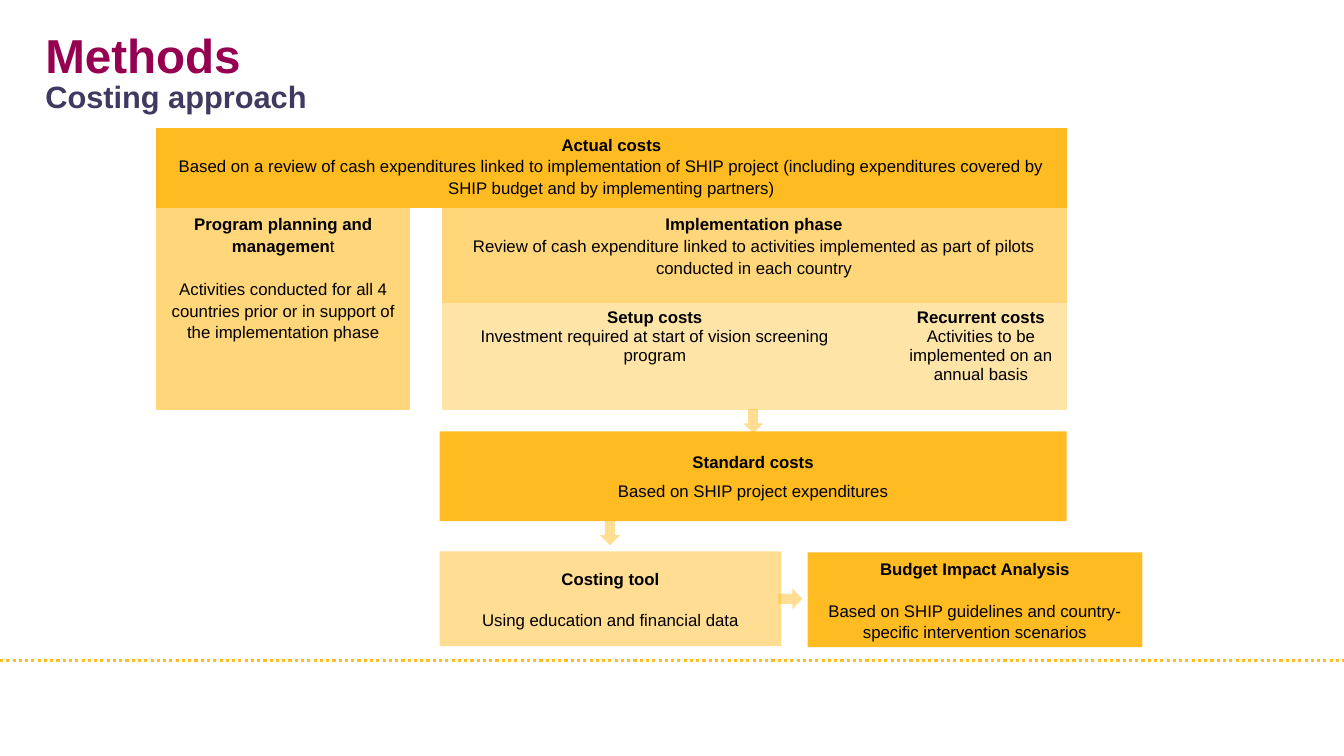
from lxml import etree
from pptx import Presentation
from pptx.dml.color import RGBColor
from pptx.enum.dml import MSO_LINE
from pptx.enum.shapes import MSO_CONNECTOR, MSO_SHAPE
from pptx.enum.text import MSO_ANCHOR, PP_ALIGN
from pptx.oxml.ns import qn
from pptx.util import Pt

PX = 9144  # 100 px to the inch
CENTER, LEFT = PP_ALIGN.CENTER, PP_ALIGN.LEFT
MIDDLE, TOP = MSO_ANCHOR.MIDDLE, MSO_ANCHOR.TOP
RECTANGLE, ARROW = MSO_SHAPE.RECTANGLE, MSO_SHAPE.RIGHT_ARROW
STRAIGHT, DOTTED = MSO_CONNECTOR.STRAIGHT, MSO_LINE.ROUND_DOT
NO_STYLE = "{2D5ABB26-0587-4C30-8999-92F81FD0307C}"
COLORS = {
    "amber": "FFBB22", "gold": "FFD67A", "cream": "FFE4A7", "white": "FFFFFF",
    "dots": "FEBB22", "title": "960051", "subtitle": "403A60", "text": "000000",
}


def write_text(text_frame, heading, body="", tail="", size=12, color="text",
               align=CENTER, spacing=1.0, gap=0):
    """Bold heading with an optional plain tail, then a plain body paragraph."""
    paragraphs = [[(heading, True), (tail, False)], [(body, False)]]
    for index, runs in enumerate(paragraphs):
        if not runs[0][0]:
            continue
        paragraph = text_frame.add_paragraph() if index else text_frame.paragraphs[0]
        paragraph.alignment = align
        paragraph.line_spacing = spacing
        if index:
            paragraph.space_before = Pt(gap)
        for text, bold in runs:
            if text:
                run = paragraph.add_run()
                run.text = text
                run.font.name = "Arial"
                run.font.size = Pt(size)
                run.font.bold = bold
                run.font.color.rgb = RGBColor.from_string(COLORS[color])


def add_block(kind, left, top, width, height, opacity=100):
    """Amber shape without an outline."""
    shape = slide.shapes.add_shape(kind, left * PX, top * PX, width * PX, height * PX)
    shape.shadow.inherit = False
    shape.line.fill.background()
    shape.fill.solid()
    shape.fill.fore_color.rgb = RGBColor.from_string(COLORS["amber"])
    if opacity < 100:
        color = shape._element.spPr.find(qn("a:solidFill"))[0]
        etree.SubElement(color, qn("a:alpha")).set("val", str(opacity * 1000))
    return shape


presentation = Presentation()
presentation.slide_width = 1333 * PX
presentation.slide_height = 750 * PX
slide = presentation.slides.add_slide(presentation.slide_layouts[6])

# Dotted footer line
footer = slide.shapes.add_connector(STRAIGHT, 0, 655 * PX, 1333 * PX, 655 * PX)
footer.line.color.rgb = RGBColor.from_string(COLORS["dots"])
footer.line.width = Pt(2.25)
footer.line.dash_style = DOTTED
etree.SubElement(footer._element.spPr, qn("a:effectLst"))

# Cost table
column_widths = [252, 31, 423, 197]
row_heights = [79, 95, 106]
frame = slide.shapes.add_table(3, 4, 155 * PX, 127 * PX,
                               sum(column_widths) * PX, sum(row_heights) * PX)
table = frame.table
table._tbl.tblPr.find(qn("a:tableStyleId")).text = NO_STYLE
for column, width in zip(table.columns, column_widths):
    column.width = width * PX
for row, height in zip(table.rows, row_heights):
    row.height = height * PX

cell_fills = [
    ["amber"] * 4,
    ["gold", "white", "gold", "gold"],
    ["gold", "white", "cream", "cream"],
]
for row_index, fills in enumerate(cell_fills):
    for column_index, fill in enumerate(fills):
        cell = table.cell(row_index, column_index)
        cell.fill.solid()
        cell.fill.fore_color.rgb = RGBColor.from_string(COLORS[fill])

merges = [((0, 0), (0, 3)), ((1, 0), (2, 0)), ((1, 1), (2, 1)), ((1, 2), (1, 3))]
for first, last in merges:
    table.cell(*first).merge(table.cell(*last))

cell_texts = [
    (0, 0, "Actual costs", "",
     "Based on a review of cash expenditures linked to implementation of SHIP project "
     "(including expenditures covered by SHIP budget and by implementing partners)", 1.15, 0),
    (1, 0, "Program planning and managemen", "t",
     "Activities conducted for all 4 countries prior or in support of "
     "the implementation phase", 1.15, 15.5),
    (1, 2, "Implementation phase", "",
     "Review of cash expenditure linked to activities implemented as part of pilots "
     "conducted in each country", 1.15, 0),
    (2, 2, "Setup costs", "",
     "Investment required at start of vision screening program", 1.0, 0),
    (2, 3, "Recurrent costs", "",
     "Activities to be implemented on an annual basis", 1.0, 0),
]
for row_index, column_index, heading, tail, body, spacing, gap in cell_texts:
    write_text(table.cell(row_index, column_index).text_frame, heading, body,
               tail=tail, spacing=spacing, gap=gap)
table.cell(2, 3).margin_left = 37 * PX

# Boxes below the table
boxes = [
    (436, 428, 622, 89, 100, "Standard costs", "Based on SHIP project expenditures", 1.0, 7),
    (436, 547, 339, 94, 49, "Costing tool", "Using education and financial data", 1.08, 14),
    (801, 548, 332, 94, 100, "Budget Impact Analysis",
     "Based on SHIP guidelines and country-specific intervention scenarios", 1.08, 14),
]
for left, top, width, height, opacity, heading, body, spacing, gap in boxes:
    box = add_block(RECTANGLE, left, top, width, height, opacity)
    box.text_frame.word_wrap = True
    box.text_frame.vertical_anchor = MIDDLE
    write_text(box.text_frame, heading, body, spacing=spacing, gap=gap)

# Arrows between the steps
for left, top, rotation in [(735, 408, 90), (593, 519, 90), (772, 584, 0)]:
    add_block(ARROW, left, top, 24, 20, opacity=49).rotation = rotation

# Title and subtitle
headings = [
    ("Methods", 26, 50, 34, "title"),
    ("Costing approach", 77, 44, 22, "subtitle"),
]
for heading, top, height, size, color in headings:
    text_box = slide.shapes.add_textbox(45 * PX, top * PX, 1200 * PX, height * PX)
    text_frame = text_box.text_frame
    text_frame.word_wrap = True
    text_frame.vertical_anchor = TOP
    text_frame.margin_left = text_frame.margin_right = 0
    text_frame.margin_top = text_frame.margin_bottom = 0
    write_text(text_frame, heading, size=size, color=color, align=LEFT)

presentation.save("out.pptx")
